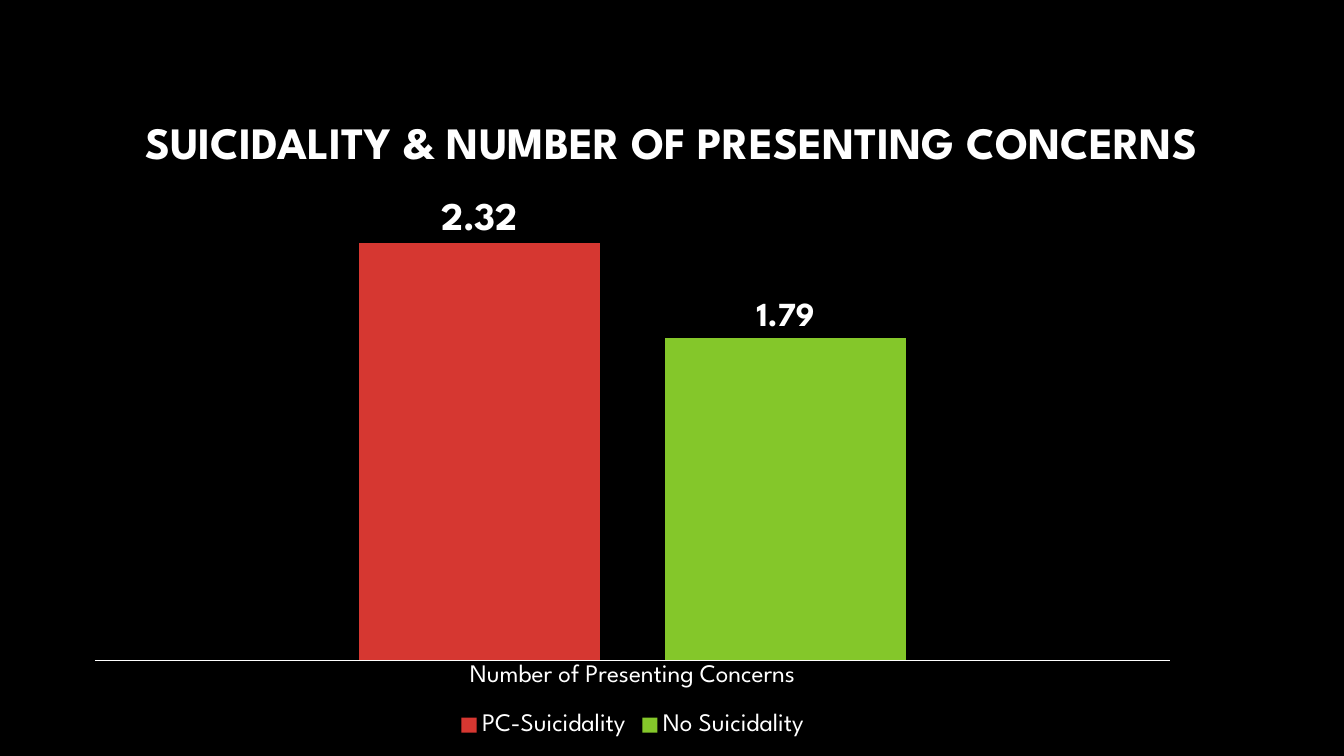
from lxml import etree
from pptx import Presentation
from pptx import util as u
from pptx.chart.data import CategoryChartData
from pptx.dml.color import RGBColor
from pptx.enum import chart as ch, text
from pptx.oxml.ns import qn

COLORS = {"back": "000000", "text": "FFFFFF", "suicidality": "D63731", "none": "84C72A"}
FONT = "League Spartan"


def rgb(name):
    return RGBColor.from_string(COLORS[name])


class Deck:
    """Holds the style and the current slide."""

    def __init__(self, width, height):
        self.prs = Presentation()
        self.prs.slide_width, self.prs.slide_height = u.Inches(width), u.Inches(height)

    def add_slide(self):
        self.slide = self.prs.slides.add_slide(self.prs.slide_layouts[5])
        fill = self.slide.background.fill
        fill.solid()
        fill.fore_color.rgb = rgb("back")

    def style(self, font, size, bold=False):
        font.name, font.size, font.bold = FONT, u.Pt(size), bold
        font.color.rgb = rgb("text")

    def title(self, wording, left, top, width, height):
        heading = self.slide.shapes.title
        heading.left, heading.top = u.Inches(left), u.Inches(top)
        heading.width, heading.height = u.Inches(width), u.Inches(height)
        frame = heading.text_frame
        frame.text = wording
        frame.word_wrap = True
        frame.vertical_anchor = text.MSO_ANCHOR.MIDDLE
        line = frame.paragraphs[0]
        line.alignment = text.PP_ALIGN.CENTER
        line.line_spacing = 0.9
        self.style(line.font, 32, True)

    def columns(self, category, groups, left, top, width, height):
        data = CategoryChartData(number_format="0.00")
        data.categories = [category]
        for name, value, _, _ in groups:
            data.add_series(name, [value])
        chart = self.slide.shapes.add_chart(
            ch.XL_CHART_TYPE.COLUMN_CLUSTERED, u.Inches(left), u.Inches(top),
            u.Inches(width), u.Inches(height), data).chart
        self.style(chart.font, 10)
        chart.has_title = False

        # Axes
        concerns = chart.category_axis
        concerns.major_tick_mark = ch.XL_TICK_MARK.NONE
        concerns.format.line.color.rgb = rgb("text")
        concerns.format.line.width = u.Pt(0.75)
        self.style(concerns.tick_labels.font, 18)
        average = chart.value_axis
        average.minimum_scale, average.maximum_scale = 0, 2.5
        average.has_major_gridlines = False
        average.visible = False

        # Legend
        chart.has_legend = True
        chart.legend.position = ch.XL_LEGEND_POSITION.BOTTOM
        chart.legend.include_in_layout = False
        self.style(chart.legend.font, 18)

        # Columns and their values
        plot = chart.plots[0]
        plot.gap_width, plot.overlap = 219, -27
        plot.vary_by_categories = False
        for series, (_, _, color, size) in zip(plot.series, groups):
            series.format.fill.solid()
            series.format.fill.fore_color.rgb = rgb(color)
            labels = series.data_labels
            labels.show_value = True
            labels.position = ch.XL_LABEL_POSITION.OUTSIDE_END
            self.style(labels.font, size, True)
        self.place_plot(chart, x=0.02, y=0.02, w=0.96, h=0.83)

    def place_plot(self, chart, **fractions):
        area = chart.plots[0]._element.getparent()
        for old in area.findall(qn("c:layout")):
            area.remove(old)
        layout = etree.Element(qn("c:layout"))
        area.insert(0, layout)
        manual = etree.SubElement(layout, qn("c:manualLayout"))
        settings = {"layoutTarget": "inner", "xMode": "edge", "yMode": "edge", **fractions}
        for tag, value in settings.items():
            etree.SubElement(manual, qn(f"c:{tag}")).set("val", str(value))


def main():
    deck = Deck(13.33, 7.5)
    deck.add_slide()
    # Chart: name, mean number of concerns, colour, label size
    groups = [("PC-Suicidality", 2.32, "suicidality", 28),
              ("No Suicidality", 1.79, "none", 24)]
    deck.columns("Number of Presenting Concerns", groups, 0.72, 1.98, 11.11, 5.38)
    # Title
    deck.title("SUICIDALITY & NUMBER OF PRESENTING CONCERNS", 0, 0.62, 13.33, 1.63)
    deck.prs.save("out.pptx")


if __name__ == "__main__":
    main()
